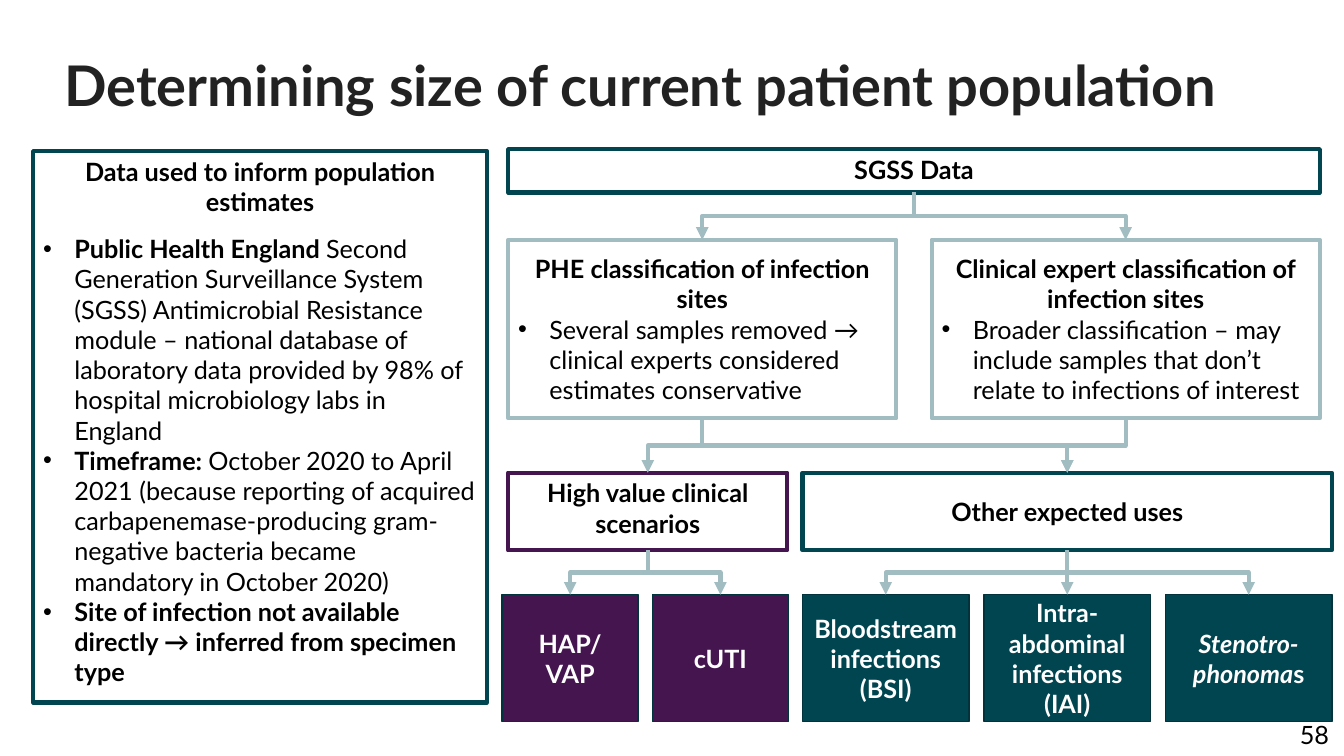
from lxml import etree
from pptx import Presentation
from pptx.dml.color import RGBColor
from pptx.enum.shapes import MSO_CONNECTOR, MSO_SHAPE
from pptx.enum.text import MSO_ANCHOR, PP_ALIGN
from pptx.oxml.ns import qn
from pptx.util import Inches, Pt

RECT = MSO_SHAPE.RECTANGLE
ELBOW = MSO_CONNECTOR.ELBOW
TOP, MIDDLE = MSO_ANCHOR.TOP, MSO_ANCHOR.MIDDLE
LEFT, CENTER, RIGHT = PP_ALIGN.LEFT, PP_ALIGN.CENTER, PP_ALIGN.RIGHT
FONT = "Lato"
TEAL, PURPLE, PALE, EDGE = "004550", "451550", "A1BDC1", "00333B"
BLACK, WHITE, INK = "000000", "FFFFFF", "222222"
FOOT, HEAD = 2, 0  # connection sites of a rectangle: bottom and top


def color(code):
    return RGBColor.from_string(code)


class Board:
    def __init__(self, deck):
        self.slide = deck.slides.add_slide(deck.slide_layouts[6])
        self.shapes = self.slide.shapes

    def style(self, para, tint=BLACK, size=18, bold=None, align=CENTER):
        para.alignment = align
        font = para.font
        font.name, font.size, font.bold = FONT, Pt(size), bold
        font.color.rgb = color(tint)

    def text(self, x, y, w, h, words, **look):
        frame = self.shapes.add_textbox(
            Inches(x), Inches(y), Inches(w), Inches(h)).text_frame
        frame.word_wrap = True
        para = frame.paragraphs[0]
        para.text = words
        self.style(para, **look)
        return para

    def box(self, x, y, w, h, lines, line=TEAL, fill=None, anchor=MIDDLE):
        """Draw a rectangle with one bold centred paragraph per line."""
        box = self.shapes.add_shape(
            RECT, Inches(x), Inches(y), Inches(w), Inches(h))
        box.shadow.inherit = False
        if fill:
            box.fill.solid()
            box.fill.fore_color.rgb = color(fill)
        else:
            box.fill.background()
        box.line.color.rgb = color(EDGE if fill else line)
        box.line.width = Pt(1 if fill else 3)
        frame = box.text_frame
        frame.word_wrap = True
        frame.vertical_anchor = anchor
        frame.text = "\n".join(lines)
        for para in frame.paragraphs:
            self.style(para, WHITE if fill else BLACK, bold=True)
        return box

    def bullet(self, box, lead, rest, gap=0):
        """Add a bulleted paragraph with a bold lead and a plain rest."""
        para = box.text_frame.add_paragraph()
        self.style(para, align=LEFT)
        para.space_before = Pt(gap)
        for words, bold in ((lead, True), (rest, False)):
            if words:
                run = para.add_run()
                run.text, run.font.bold = words, bold
        props = para._p.get_or_add_pPr()
        props.set("marL", str(Inches(0.31)))
        props.set("indent", str(-Inches(0.31)))
        face = etree.Element(qn("a:buFont"), typeface="Arial")
        mark = etree.Element(qn("a:buChar"), char="•")
        font = props.find(qn("a:defRPr"))
        font.addprevious(face)
        font.addprevious(mark)

    def arrow(self, start, end):
        """Join the foot of one box to the head of another, down first."""
        link = self.shapes.add_connector(ELBOW, 0, 0, 0, 0)
        link.begin_connect(start, FOOT)
        link.end_connect(end, HEAD)
        x1, y1, x2, y2 = link.begin_x, link.begin_y, link.end_x, link.end_y
        # A quarter turn swaps the width and height of the frame.
        wide, high = y2 - y1, abs(x2 - x1)
        link.left, link.top = (x1 + x2 - wide) // 2, (y1 + y2 - high) // 2
        link.width, link.height = wide, high
        right = x2 > x1
        props = link._element.spPr
        frame = props.find(qn("a:xfrm"))
        frame.set("rot", "16200000" if right else "5400000")
        frame.set("flipH", "1" if right else "0")
        link.line.color.rgb = color(PALE)
        link.line.width = Pt(3)
        etree.SubElement(link.line._get_or_add_ln(), qn("a:tailEnd"),
                         type="triangle")
        etree.SubElement(props, qn("a:effectLst"))


def main():
    deck = Presentation()
    deck.slide_width, deck.slide_height = Inches(13.33), Inches(7.5)
    board = Board(deck)

    board.text(11.44, 7.09, 1.84, 0.4, "58", align=RIGHT)
    title = board.text(0.54, 0.53, 12.12, 1.4,
                       "Determining size of current patient population",
                       tint=INK, size=40, bold=True, align=LEFT)
    title.line_spacing = 0.9

    data = board.box(0.33, 1.5, 4.5, 5.47,
                     ["Data used to inform population estimates"], anchor=TOP)
    board.bullet(data, "Public Health England ",
                 "Second Generation Surveillance System (SGSS) Antimicrobial "
                 "Resistance module – national database of laboratory data "
                 "provided by 98% of hospital microbiology labs in England",
                 gap=12)
    board.bullet(data, "Timeframe: ",
                 "October 2020 to April 2021 (because reporting of acquired "
                 "carbapenemase-producing gram-negative bacteria became "
                 "mandatory in October 2020)")
    board.bullet(data, "Site of infection not available directly → inferred "
                 "from specimen type", "")

    sgss = board.box(5.04, 1.48, 8.05, 0.43, ["SGSS Data"], anchor=TOP)
    sites = []
    for x, head, note in (
        (5.04, "PHE classification of infection sites",
         "Several samples removed → clinical experts considered estimates "
         "conservative"),
        (9.24, "Clinical expert classification of infection sites",
         "Broader classification – may include samples that don’t relate to "
         "infections of interest"),
    ):
        site = board.box(x, 2.38, 3.85, 1.77, [head], PALE)
        board.bullet(site, "", note)
        sites.append(site)

    high = board.box(5.04, 4.69, 2.77, 0.77,
                     ["High value clinical scenarios"], PURPLE, anchor=TOP)
    other = board.box(7.96, 4.69, 5.25, 0.77, ["Other expected uses"])

    links = [(sgss, site) for site in sites]
    links += [(sites[0], high), (sites[0], other), (sites[1], other)]
    for group, left, step, width, fill, uses in (
        (high, 4.98, 1.49, 1.35, PURPLE, (["HAP/", "VAP"], ["cUTI"])),
        (other, 7.96, 1.8, 1.65, TEAL,
         (["Bloodstream infections (BSI)"],
          ["Intra-abdominal infections (IAI)"], ["Stenotro-phonoma"])),
    ):
        for i, lines in enumerate(uses):
            use = board.box(left + i * step, 5.9, width, 1.26, lines,
                            fill=fill)
            links.append((group, use))

    genus = use.text_frame.paragraphs[0]
    genus.runs[0].font.italic = True
    genus.add_run().text = "s"

    for start, end in links:
        board.arrow(start, end)
    deck.save("out.pptx")


if __name__ == "__main__":
    main()
